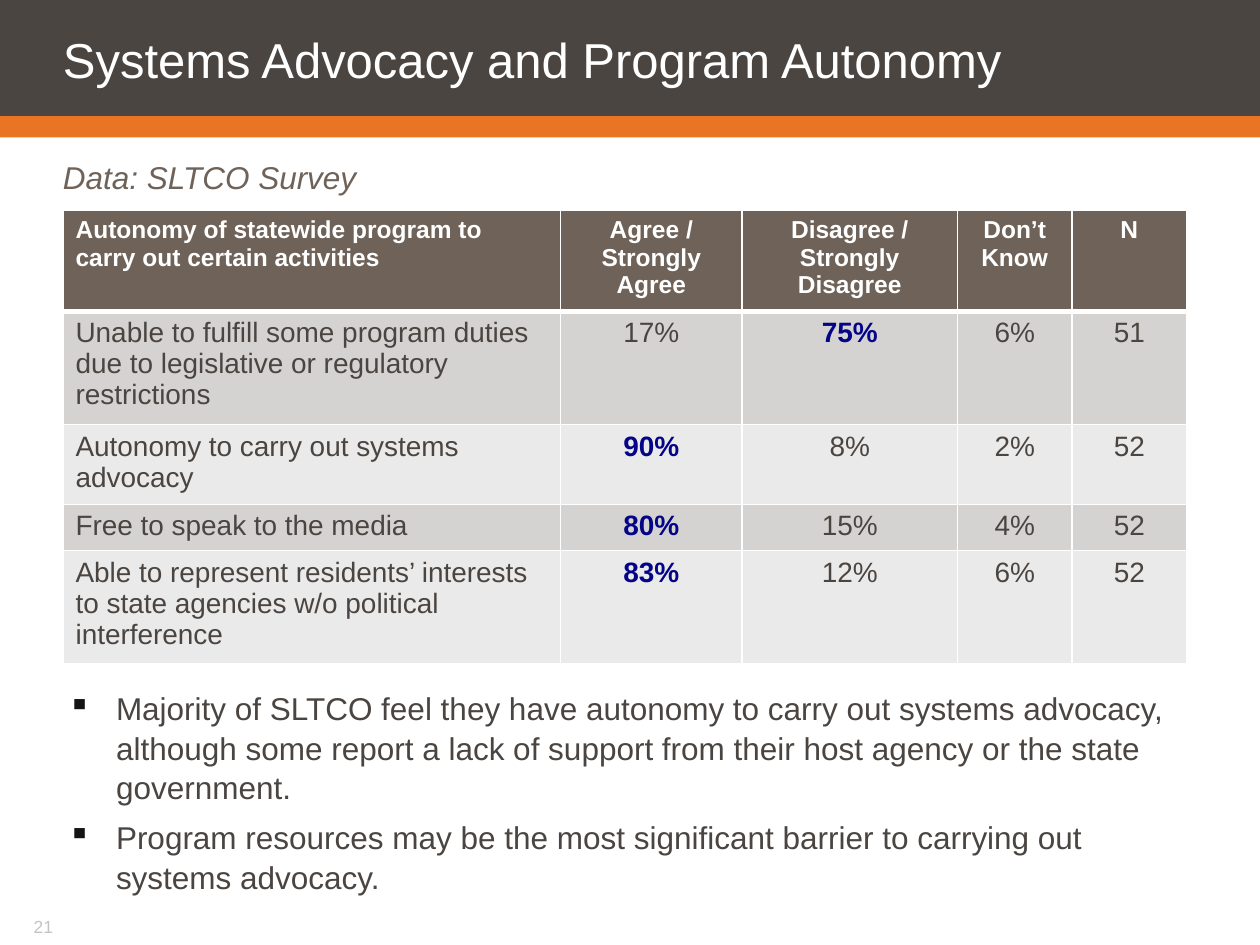
import pptx
import pptx.chart.data
import pptx.dml.color
import pptx.enum.shapes
import pptx.enum.text
import pptx.oxml
import pptx.oxml.ns
import pptx.util
from pptx.util import Cm

DARK, BROWN, ORANGE, WHITE, NAVY = "4A4541", "6E6259", "E87424", "FFFFFF", "040488"
CENTER = pptx.enum.text.PP_ALIGN.CENTER


def color(value):
    return pptx.dml.color.RGBColor.from_string(value)


def add_span(para, text, size, tint, bold=False, italic=False):
    span = para.add_run()
    span.text = text
    span.font.name = "Arial"
    span.font.size = pptx.util.Pt(size)
    span.font.color.rgb = color(tint)
    span.font.bold = bold
    span.font.italic = italic


deck = pptx.Presentation()
deck.slide_width, deck.slide_height = Cm(25.4), Cm(19.05)
page = deck.slides.add_slide(deck.slide_layouts[6])

for top, height, tint in [(0, 2.34, DARK), (2.34, 0.43, ORANGE)]:
    band = page.shapes.add_shape(
        pptx.enum.shapes.MSO_SHAPE.RECTANGLE, 0, Cm(top), Cm(25.4), Cm(height))
    band.shadow.inherit = False
    band.fill.solid()
    band.fill.fore_color.rgb = color(tint)
    band.line.fill.background()

frames = {}
for name, place, insets in [
    ("number", (0.43, 18.47, 4.88, 0.46), (0.25, 0, 0.25, 0.13)),
    ("title", (0, 0, 25.4, 2.34), (1.27, 0.25, 0.25, 0)),
    ("source", (0, 3.05, 25.4, 0.89), (1.27, 0.13, 0, 0.13)),
    ("findings", (1.37, 13.72, 22.66, 4.45), (0, 0.13, 0, 0.13)),
]:
    frame = page.shapes.add_textbox(*[Cm(length) for length in place]).text_frame
    frame.word_wrap = True
    frame.margin_left, frame.margin_top, frame.margin_right, frame.margin_bottom = [
        Cm(inset) for inset in insets]
    frames[name] = frame

add_span(frames["number"].paragraphs[0], "21", 10, "C8C2BF")
add_span(frames["source"].paragraphs[0], "Data: SLTCO Survey", 18, BROWN, italic=True)
frames["title"].vertical_anchor = pptx.enum.text.MSO_ANCHOR.MIDDLE
para = frames["title"].paragraphs[0]
para.line_spacing = pptx.util.Pt(28)
add_span(para, "Systems Advocacy and Program Autonomy", 28, WHITE)

findings = [
    "Majority of SLTCO feel they have autonomy to carry out systems advocacy, although some "
    "report a lack of support from their host agency or the state government.",
    "Program resources may be the most significant barrier to carrying out systems advocacy.",
]
for index, text in enumerate(findings):
    para = frames["findings"].add_paragraph() if index else frames["findings"].paragraphs[0]
    props = para._p.get_or_add_pPr()
    props.set("marL", str(Cm(0.97)))
    props.set("indent", str(-Cm(0.97)))
    for xml in ['buClr {}><a:srgbClr val="161413"/></a:buClr>', 'buChar {} char="▪"/>']:
        props.append(pptx.oxml.parse_xml("<a:" + xml.format(pptx.oxml.ns.nsdecls("a"))))
    para.line_spacing = 1.05
    if index:
        para.space_before = pptx.util.Pt(6)
    add_span(para, text, 18, DARK)

rows = [
    ("Autonomy of statewide program to carry out certain activities",
     "Agree / Strongly Agree", "Disagree / Strongly Disagree", "Don’t Know", "N"),
    ("Unable to fulfill some program duties due to legislative or regulatory restrictions",
     "17%", "75%", "6%", "51"),
    ("Autonomy to carry out systems advocacy", "90%", "8%", "2%", "52"),
    ("Free to speak to the media", "80%", "15%", "4%", "52"),
    ("Able to represent residents’ interests to state agencies w/o political interference",
     "83%", "12%", "6%", "52"),
]
majorities = {"75%", "90%", "80%", "83%"}
widths = [10.03, 3.66, 4.34, 2.31, 2.31]
heights = [1.4, 1.83, 1.02, 0.91, 1.98]
table = page.shapes.add_table(
    len(rows), len(widths), Cm(1.27), Cm(4.24), Cm(sum(widths)), Cm(sum(heights))).table
table.first_row = table.horz_banding = False
for column, width in zip(table.columns, widths):
    column.width = Cm(width)
for row, height in zip(table.rows, heights):
    row.height = Cm(height)

for y, texts in enumerate(rows):
    for x, text in enumerate(texts):
        cell = table.cell(y, x)
        para = cell.text_frame.paragraphs[0]
        if x:
            para.alignment = CENTER
        if y == 0:
            add_span(para, text, 14, WHITE, bold=True)
        else:
            major = text in majorities
            add_span(para, text, 16, NAVY if major else DARK, bold=major)
        props = cell._tc.get_or_add_tcPr()
        for side in "LRTB":
            heavy = (y == 0 and side == "B") or (y == 1 and side == "T")
            props.append(pptx.oxml.parse_xml(
                f'<a:ln{side} {pptx.oxml.ns.nsdecls("a")} w="{pptx.util.Pt(3 if heavy else 1)}">'
                f'<a:solidFill><a:srgbClr val="{WHITE}"/></a:solidFill></a:ln{side}>'))
        cell.fill.solid()
        cell.fill.fore_color.rgb = color(BROWN if y == 0 else "D5D3D1" if y % 2 else "EBEAEA")

deck.save("out.pptx")
